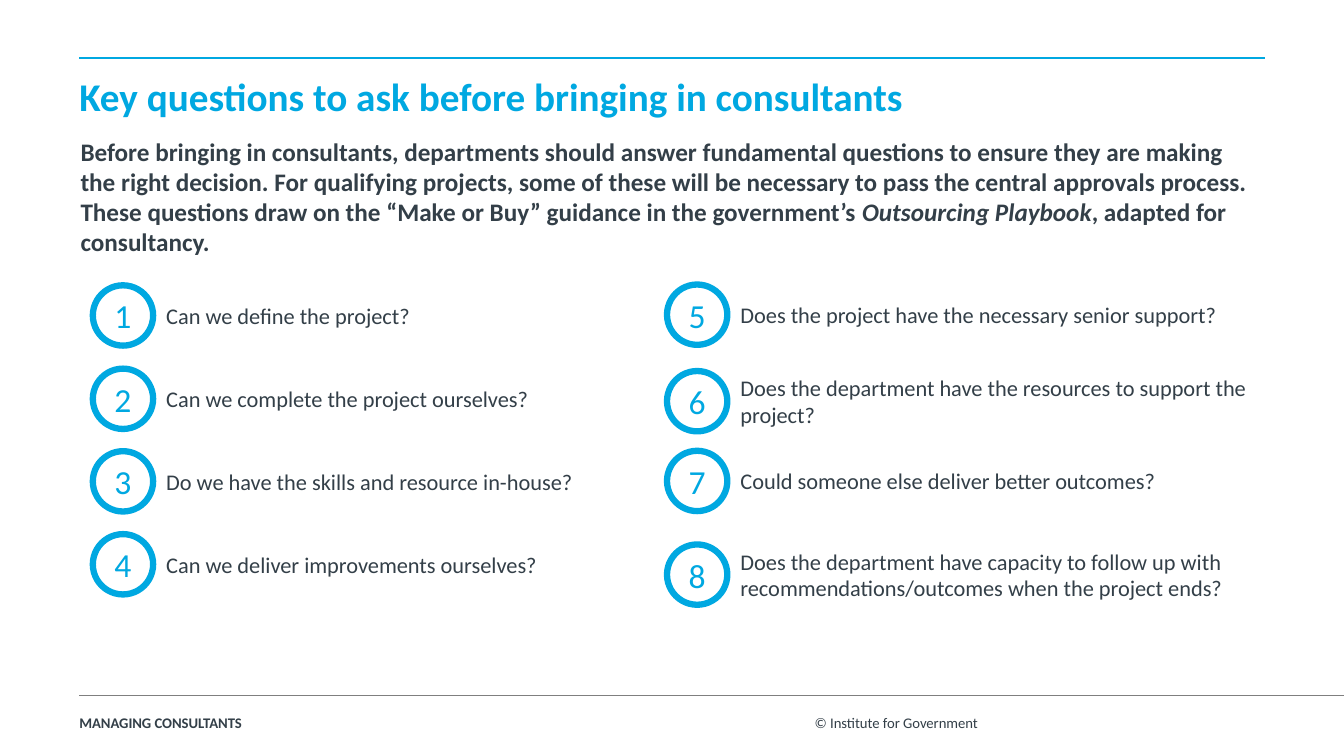
import pptx
import pptx.util
import pptx.dml.color
import pptx.enum.shapes
import pptx.enum.text
import pptx.oxml.ns
import lxml.etree
from dataclasses import dataclass

Cm = pptx.util.Cm
Pt = pptx.util.Pt
Anchor = pptx.enum.text.MSO_ANCHOR
Align = pptx.enum.text.PP_ALIGN


@dataclass(frozen=True)
class Theme:
    face: str = "Calibri"
    blue: str = "00A8E1"
    ink: str = "333F48"
    grey: str = "7F7F7F"
    white: str = "FFFFFF"
    title: float = 28
    number: float = 24
    intro: float = 18
    item: float = 16
    small: float = 10.5


class Page:
    def __init__(self, slide, theme):
        self.slide = slide
        self.theme = theme

    def color(self, code):
        return pptx.dml.color.RGBColor.from_string(code)

    def letter(self, frame, runs, size, color, bold=False):
        """Fill the frame with one paragraph of (text, italic) runs."""
        para = frame.paragraphs[0]
        para.font.name = self.theme.face
        para.font.size = Pt(size)
        para.font.bold = bold
        para.font.color.rgb = self.color(color)
        for words, italic in runs:
            run = para.add_run()
            run.text = words
            if italic:
                run.font.italic = True
        return para

    def text(self, box, runs, size, color=None, bold=False, inset=True,
             anchor=Anchor.TOP):
        frame = self.slide.shapes.add_textbox(*map(Cm, box)).text_frame
        frame.word_wrap = True
        frame.vertical_anchor = anchor
        if not inset:
            frame.margin_left = frame.margin_right = 0
            frame.margin_top = frame.margin_bottom = 0
        if isinstance(runs, str):
            runs = [(runs, False)]
        return self.letter(frame, runs, size, color or self.theme.ink, bold)

    def rule(self, left, right, top, color, width):
        line = self.slide.shapes.add_connector(
            pptx.enum.shapes.MSO_CONNECTOR.STRAIGHT,
            Cm(left), Cm(top), Cm(right), Cm(top))
        line.line.color.rgb = self.color(color)
        line.line.width = Pt(width)
        lxml.etree.SubElement(line._element.spPr,
                              pptx.oxml.ns.qn("a:effectLst"))

    def badge(self, left, middle, label):
        size = 1.52
        ring = self.slide.shapes.add_shape(
            pptx.enum.shapes.MSO_SHAPE.OVAL,
            Cm(left), Cm(middle - size / 2), Cm(size), Cm(size))
        ring.shadow.inherit = False
        ring.fill.solid()
        ring.fill.fore_color.rgb = self.color(self.theme.white)
        ring.line.color.rgb = self.color(self.theme.blue)
        ring.line.width = Pt(4.5)
        ring.text_frame.vertical_anchor = Anchor.MIDDLE
        para = self.letter(ring.text_frame, [(label, False)],
                           self.theme.number, self.theme.blue)
        para.alignment = Align.CENTER

    def question(self, left, middle, number, words, lines):
        """Place a numbered question, centred on the height middle."""
        high = 0.26 + 0.68 * lines
        self.text((left + 1.6, middle - high / 2, 15.1, high), words,
                  self.theme.item, anchor=Anchor.MIDDLE)
        self.badge(left, middle, str(number))


INTRO = [
    ("Before bringing in consultants, departments should answer fundamental "
     "questions to ensure they are making the right decision. For qualifying "
     "projects, some of these will be necessary to pass the central approvals "
     "process. These questions draw on the “Make or Buy” guidance in the "
     "government’s ", False),
    ("Outsourcing Playbook", True),
    (", adapted for consultancy.", False),
]

# Left edge of each column, then middle height, wording and line count
COLUMNS = [
    (2.34, [
        (7.95, "Can we define the project?", 1),
        (10.05, "Can we complete the project ourselves?", 1),
        (12.13, "Do we have the skills and resource in-house?", 1),
        (14.22, "Can we deliver improvements ourselves?", 1),
    ]),
    (16.81, [
        (7.93, "Does the project have the necessary senior support?", 1),
        (10.11, "Does the department have the resources to support the "
                "project?", 2),
        (12.12, "Could someone else deliver better outcomes?", 1),
        (14.48, "Does the department have capacity to follow up with "
                "recommendations/outcomes when the project ends?", 2),
    ]),
]


def main():
    deck = pptx.Presentation()
    deck.slide_width = Cm(33.87)
    deck.slide_height = Cm(19.05)
    theme = Theme()
    page = Page(deck.slides.add_slide(deck.slide_layouts[6]), theme)

    edge = 2.0
    page.rule(edge, 31.88, 1.46, theme.blue, 1.5)
    page.rule(edge, 33.87, 17.52, theme.grey, 0.75)
    title = page.text((edge, 1.6, 28, 2.5),
                      "Key questions to ask before bringing in consultants",
                      theme.title, theme.blue, bold=True, inset=False)
    title.line_spacing = Pt(40)
    page.text((1.78, 3.3, 30.28, 3.33), INTRO, theme.intro, bold=True)

    number = 0
    for left, items in COLUMNS:
        for middle, words, lines in items:
            number += 1
            page.question(left, middle, number, words, lines)

    page.text((edge, 17.98, 12.27, 0.69), "MANAGING CONSULTANTS",
              theme.small, bold=True, inset=False)
    page.text((20.53, 17.98, 6.96, 0.69), "© Institute for Government",
              theme.small, inset=False)
    deck.save("out.pptx")


if __name__ == "__main__":
    main()
